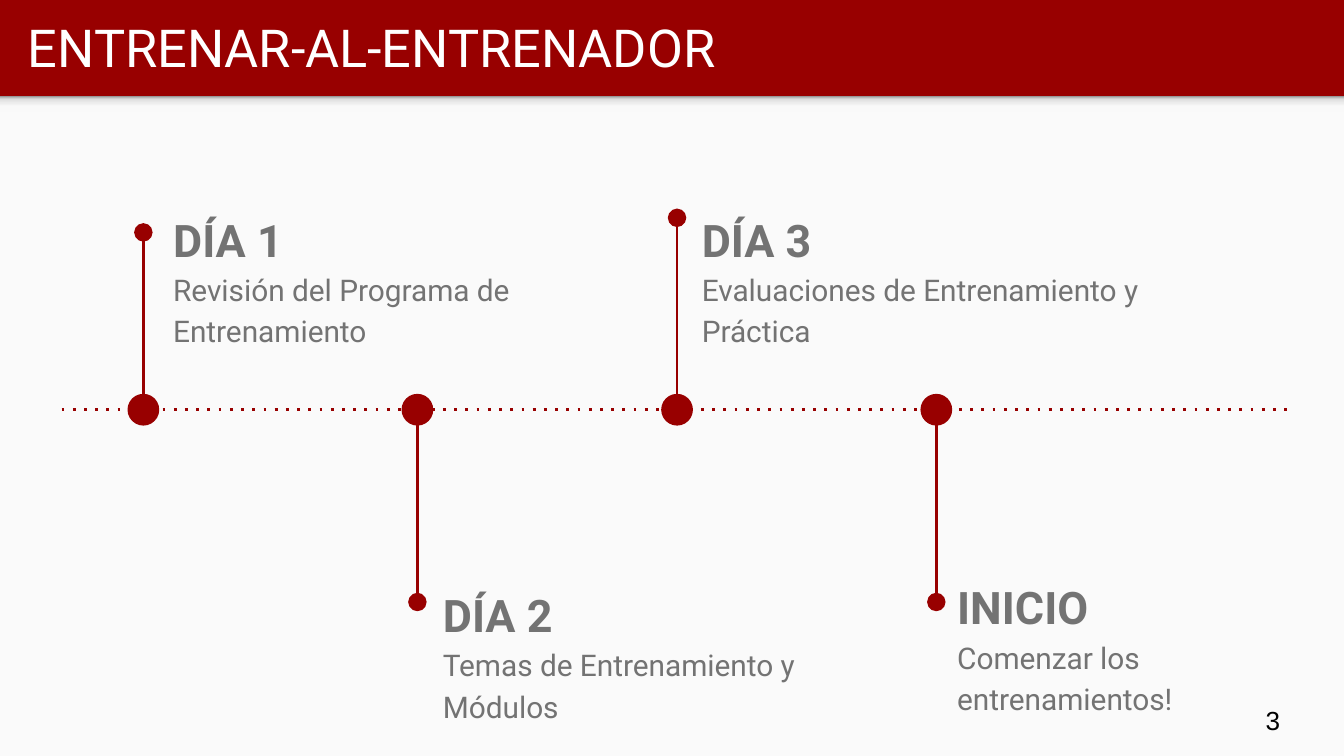
from lxml import etree
from pptx import Presentation
from pptx.dml.color import RGBColor
from pptx.enum import shapes, text
from pptx.oxml import parse_xml
from pptx.oxml.ns import nsdecls, qn
from pptx.util import Pt

TITLE = "ENTRENAR-AL-ENTRENADOR"
PAGE = "3"
# heading, detail, stem x, stem tip y, text box (left, top, width)
STEPS = [
    ("DÍA 1", "Revisión del Programa de Entrenamiento", 76.8, 124.5, (85.7, 102.4, 269)),
    ("DÍA 2", "Temas de Entrenamiento y Módulos", 223.6, 322.5, (230.2, 303.5, 241)),
    ("DÍA 3", "Evaluaciones de Entrenamiento y Práctica", 362.7, 116.7, (368.9, 102.4, 269)),
    ("INICIO", "Comenzar los entrenamientos!", 501.6, 322.5, (505.7, 299.3, 209.5)),
]
COLORS = {"red": "980000", "paper": "FAFAFA", "gray": "737373",
          "white": "FFFFFF", "black": "000000"}
SHADOW_STOPS = [(0, "F9F9F9"), (36, "F9F9F9"), (80, "DEDEDE"), (100, "999999")]
WIDTH, HEIGHT, HEADER = 720, 405, 51.5
AXIS_Y, AXIS_LEFT, AXIS_RIGHT = 219.5, 33, 690
DOT, LINE = 15.5, 1.5

prs = Presentation()
prs.slide_width, prs.slide_height = Pt(WIDTH), Pt(HEIGHT)
s = prs.slides.add_slide(prs.slide_layouts[6])


def rgb(name):
    return RGBColor.from_string(COLORS[name])


def add_solid(kind, left, top, width, height, color, outline=None):
    sp = s.shapes.add_shape(kind, Pt(left), Pt(top), Pt(width), Pt(height))
    sp.shadow.inherit = False
    sp.fill.solid()
    sp.fill.fore_color.rgb = rgb(color)
    if outline:
        sp.line.color.rgb = rgb(color)
        sp.line.width = Pt(outline)
    else:
        sp.line.fill.background()
    return sp


def add_line(x1, y1, x2, y2, ending, **attributes):
    """Draw a red line; ending is the line-style element to add."""
    line = s.shapes.add_connector(shapes.MSO_CONNECTOR.STRAIGHT,
                                  Pt(x1), Pt(y1), Pt(x2), Pt(y2))
    line.line.color.rgb = rgb("red")
    line.line.width = Pt(LINE)
    etree.SubElement(line.line._get_or_add_ln(), qn(ending), **attributes)
    etree.SubElement(line._element.spPr, qn("a:effectLst"))


def add_text(box, paragraphs, color, font="Roboto", anchor="TOP", spacing=None):
    """Fill a text box with (words, size, bold, space after) paragraphs."""
    tf = s.shapes.add_textbox(*map(Pt, box)).text_frame
    tf.word_wrap = True
    tf.vertical_anchor = text.MSO_ANCHOR[anchor]
    tf.margin_left = tf.margin_right = tf.margin_top = tf.margin_bottom = Pt(7.2)
    for i, (words, size, bold, after) in enumerate(paragraphs):
        p = tf.paragraphs[0] if i == 0 else tf.add_paragraph()
        p.line_spacing = spacing
        p.space_after = Pt(after)
        r = p.add_run()
        r.text = words
        r.font.name, r.font.size, r.font.bold = font, Pt(size), bold
        r.font.color.rgb = rgb(color)


def add_header_shadow():
    sp = add_solid(shapes.MSO_SHAPE.RECTANGLE, 0, HEADER, WIDTH, 8.5, "paper")
    stops = "".join(f'<a:gs pos="{pos * 1000}"><a:srgbClr val="{color}"/></a:gs>'
                    for pos, color in SHADOW_STOPS)
    gradient = parse_xml(f'<a:gradFill {nsdecls("a")}><a:gsLst>{stops}</a:gsLst>'
                         '<a:lin ang="16200000" scaled="0"/></a:gradFill>')
    solid = sp._element.spPr.find(qn("a:solidFill"))
    sp._element.spPr.replace(solid, gradient)


s.background.fill.solid()
s.background.fill.fore_color.rgb = rgb("red")
add_solid(shapes.MSO_SHAPE.RECTANGLE, 0, HEADER, WIDTH, HEIGHT - HEADER, "paper")
add_header_shadow()
add_text((7.9, 1.5, 695, 47.5), [(TITLE, 28, False, 0)], "white", anchor="MIDDLE")

add_line(AXIS_LEFT, AXIS_Y, AXIS_RIGHT, AXIS_Y, "a:prstDash", val="dot")
for heading, detail, x, tip_y, (left, top, width) in STEPS:
    edge = DOT / 2 if tip_y > AXIS_Y else -DOT / 2
    add_line(x, AXIS_Y + edge, x, tip_y, "a:tailEnd", type="oval", w="lg", len="lg")
    add_solid(shapes.MSO_SHAPE.OVAL, x - DOT / 2, AXIS_Y - DOT / 2, DOT, DOT, "red", LINE)
    add_text((left, top, width, 76.5),
             [(heading, 24, True, 0), (detail, 16, False, 16)], "gray", spacing=1.15)

add_text((671, 370, 43, 31), [(PAGE, 14, False, 0)], "black", font="Arial", anchor="MIDDLE")
prs.save("out.pptx")
